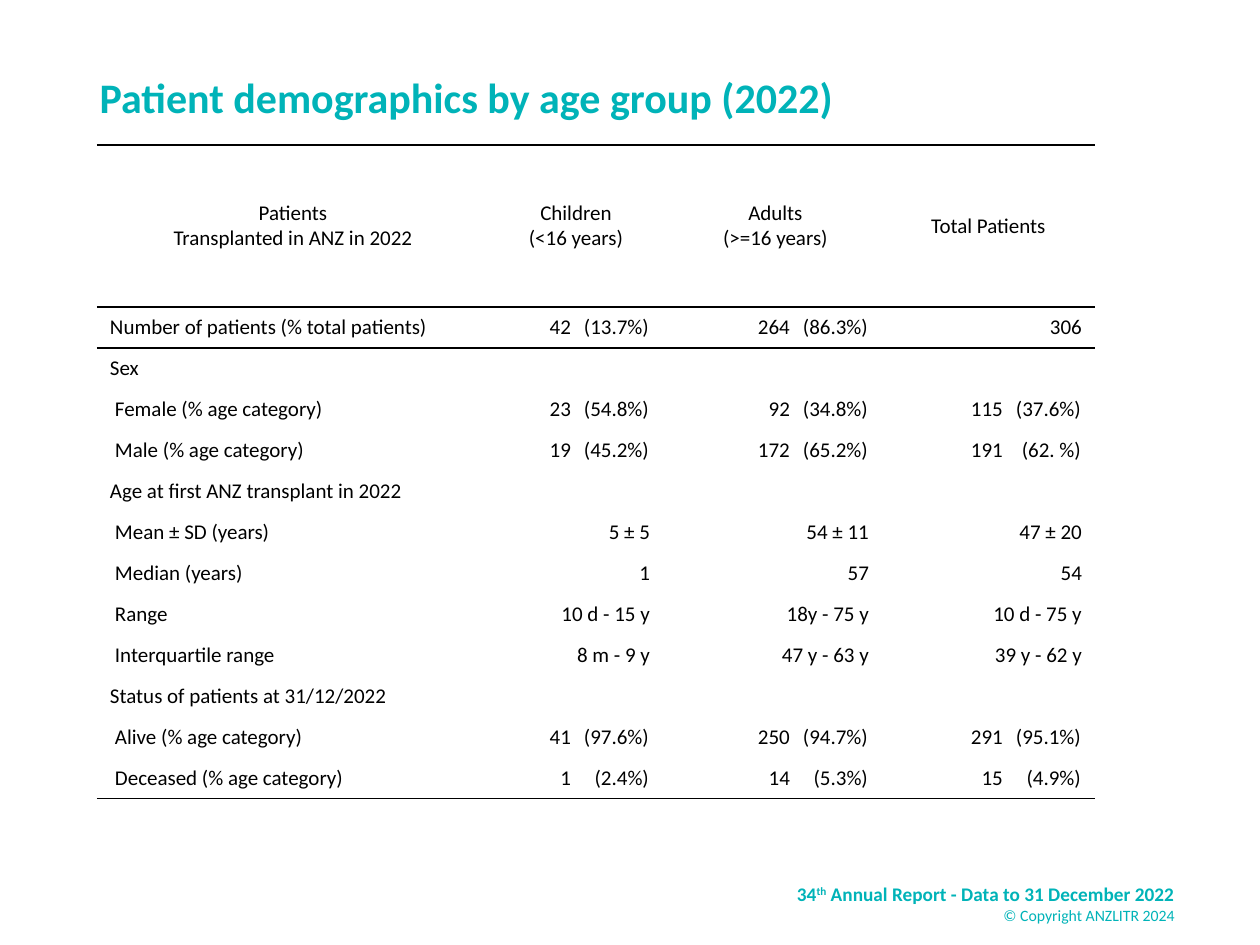
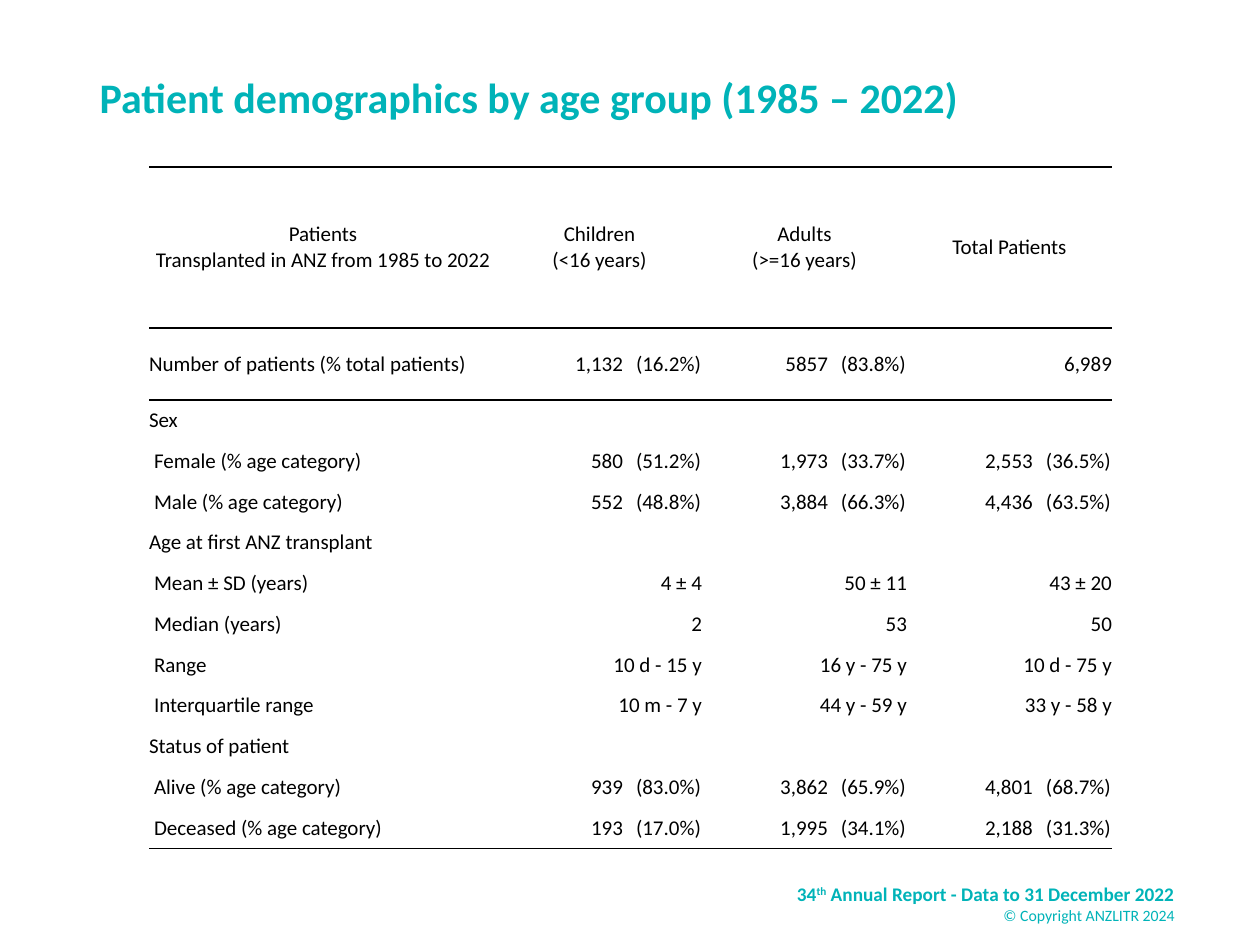
from dataclasses import dataclass

from lxml import etree
from pptx import Presentation
from pptx import util as u
from pptx.dml.color import RGBColor
from pptx.enum import text as t
from pptx.oxml import ns

TEAL = RGBColor(0x00, 0xB3, 0xB8)
BLACK = RGBColor(0x00, 0x00, 0x00)
FONT = "Calibri"
PX_PER_INCH = 126
NO_GRID_STYLE = "{2D5ABB26-0587-4C30-8999-92F81FD0307C}"
COUNT_OFFSET = 79  # from the end of a count to the right edge of its percentage
LABEL_INDENT = 5
COLUMN_HEADS = ("Children\n(<16 years)", "Adults\n(>=16 years)", "Total Patients")


@dataclass(frozen=True)
class Demographics:
    title: str
    left: int
    top: int
    columns: tuple[int, ...]
    header_height: int
    total_height: int
    detail_height: int
    left_inset: int
    right_insets: tuple[int, ...]
    heading: str
    rows: tuple[tuple[str, ...], ...]


YEAR_2022 = Demographics(
    title="Patient demographics by age group (2022)",
    left=97, top=145, columns=(392, 180, 213, 213),
    header_height=162, total_height=41, detail_height=451,
    left_inset=13, right_insets=(13, 19, 13, 13),
    heading="Patients\nTransplanted in ANZ in 2022",
    rows=(
        ("Number of patients (% total patients)", "42 (13.7%)", "264 (86.3%)", "306"),
        ("Sex",),
        ("Female (% age category)", "23 (54.8%)", "92 (34.8%)", "115 (37.6%)"),
        ("Male (% age category)", "19 (45.2%)", "172 (65.2%)", "191 (62. %)"),
        ("Age at first ANZ transplant in 2022",),
        ("Mean ± SD (years)", "5 ± 5", "54 ± 11", "47 ± 20"),
        ("Median (years)", "1", "57", "54"),
        ("Range", "10 d - 15 y", "18y - 75 y", "10 d - 75 y"),
        ("Interquartile range", "8 m - 9 y", "47 y - 63 y", "39 y - 62 y"),
        ("Status of patients at 31/12/2022",),
        ("Alive (% age category)", "41 (97.6%)", "250 (94.7%)", "291 (95.1%)"),
        ("Deceased (% age category)", "1 (2.4%)", "14 (5.3%)", "15 (4.9%)"),
    ),
)

ALL_YEARS = Demographics(
    title="Patient demographics by age group (1985 – 2022)",
    left=149, top=167, columns=(348, 205, 205, 205),
    header_height=161, total_height=72, detail_height=449,
    left_inset=0, right_insets=(0, 0, 0, 0),
    heading="Patients\nTransplanted in ANZ from 1985 to 2022",
    rows=(
        ("Number of patients (% total patients)", "1,132 (16.2%)", "5857 (83.8%)", "6,989"),
        ("Sex",),
        ("Female (% age category)", "580 (51.2%)", "1,973 (33.7%)", "2,553 (36.5%)"),
        ("Male (% age category)", "552 (48.8%)", "3,884 (66.3%)", "4,436 (63.5%)"),
        ("Age at first ANZ transplant",),
        ("Mean ± SD (years)", "4 ± 4", "50 ± 11", "43 ± 20"),
        ("Median (years)", "2", "53", "50"),
        ("Range", "10 d - 15 y", "16 y - 75 y", "10 d - 75 y"),
        ("Interquartile range", "10 m - 7 y", "44 y - 59 y", "33 y - 58 y"),
        ("Status of patient",),
        ("Alive (% age category)", "939 (83.0%)", "3,862 (65.9%)", "4,801 (68.7%)"),
        ("Deceased (% age category)", "193 (17.0%)", "1,995 (34.1%)", "2,188 (31.3%)"),
    ),
)


def px(length: float) -> u.Emu:
    return u.Emu(round(length * u.Inches(1) / PX_PER_INCH))


def format_run(run, size: int, color: RGBColor, bold: bool = False) -> None:
    run.font.name = FONT
    run.font.size = u.Pt(size)
    run.font.bold = bold
    run.font.color.rgb = color


def add_rule(cell, side: str) -> None:
    """Draw a black line on one side of a cell: lnT or lnB."""
    line = etree.SubElement(cell._tc.get_or_add_tcPr(), ns.qn(f"a:{side}"), w=str(u.Pt(1)))
    fill = etree.SubElement(line, ns.qn("a:solidFill"))
    etree.SubElement(fill, ns.qn("a:srgbClr"), val=str(BLACK))


def add_right_tabs(paragraph, *stops: int) -> None:
    tabs = etree.SubElement(paragraph._p.get_or_add_pPr(), ns.qn("a:tabLst"))
    for stop in stops:
        etree.SubElement(tabs, ns.qn("a:tab"), pos=str(px(stop)), algn="r")


def fill_cell(cell, content: str, left_inset: int, right_inset: int) -> None:
    cell.margin_left, cell.margin_right = px(left_inset), px(right_inset)
    cell.margin_top = cell.margin_bottom = 0
    cell.vertical_anchor = t.MSO_ANCHOR.MIDDLE
    cell.fill.background()
    cell.text_frame.text = content
    for paragraph in cell.text_frame.paragraphs:
        for run in paragraph.runs:
            format_run(run, 12, BLACK)


def align_figure(paragraph, text_width: int) -> None:
    """Right-align a figure; a count and its percentage get a tab stop each."""
    if "\t" in paragraph.text:
        paragraph.alignment = t.PP_ALIGN.LEFT
        add_right_tabs(paragraph, text_width - COUNT_OFFSET, text_width - 1)
    else:
        paragraph.alignment = t.PP_ALIGN.RIGHT


def add_demographics_table(slide, data: Demographics) -> None:
    rows = ((data.heading, *COLUMN_HEADS), *data.rows)
    detail_rows = len(rows) - 2
    heights = [data.header_height, data.total_height]
    heights += [data.detail_height / detail_rows] * detail_rows
    table = slide.shapes.add_table(
        len(rows), len(data.columns), px(data.left), px(data.top),
        px(sum(data.columns)), px(sum(heights))).table
    table.first_row = table.horz_banding = False
    table._tbl.tblPr.find(ns.qn("a:tableStyleId")).text = NO_GRID_STYLE
    for column, width in zip(table.columns, data.columns):
        column.width = px(width)

    for r, (row, height) in enumerate(zip(rows, heights)):
        table.rows[r].height = px(height)
        for c, width in enumerate(data.columns):
            cell = table.cell(r, c)
            if r == 0:
                add_rule(cell, "lnT")
            if r in (0, 1, len(rows) - 1):
                add_rule(cell, "lnB")
            content = row[c] if c < len(row) else ""
            if r and c and "(" in content:
                content = "\t" + content.replace(" (", "\t(")
            fill_cell(cell, content, data.left_inset, data.right_insets[c])
            first = cell.text_frame.paragraphs[0]
            if r == 0:
                for paragraph in cell.text_frame.paragraphs:
                    paragraph.alignment = t.PP_ALIGN.CENTER
            elif c:
                align_figure(first, width - data.left_inset - data.right_insets[c])
            elif r > 1 and len(row) > 1:
                first._p.get_or_add_pPr().set("marL", str(px(LABEL_INDENT)))


def add_title(slide, title: str) -> None:
    holder = slide.shapes.title
    holder.left, holder.top, holder.width, holder.height = map(px, (87, 34, 1086, 132))
    frame = holder.text_frame
    frame.text = title
    frame.vertical_anchor = t.MSO_ANCHOR.MIDDLE
    paragraph = frame.paragraphs[0]
    paragraph.alignment = t.PP_ALIGN.LEFT
    paragraph.line_spacing = 0.9
    format_run(paragraph.runs[0], 24, TEAL, bold=True)


def add_master_footer(prs, slide) -> None:
    """Build the report line on a slide, then move it to the shared master."""
    footer = slide.shapes.add_textbox(*map(px, (762, 876, 425, 50)))
    frame = footer.text_frame
    frame.word_wrap = True
    report, copyright_line = frame.paragraphs[0], frame.add_paragraph()
    for part in ("34", "th", " Annual Report - Data to 31 December 2022"):
        run = report.add_run()
        run.text = part
        format_run(run, 11, TEAL, bold=True)
    report.runs[1].font._element.set("baseline", "30000")
    copyright_line.text = "© Copyright ANZLITR 2024"
    format_run(copyright_line.runs[0], 9, TEAL)
    for paragraph in frame.paragraphs:
        paragraph.alignment = t.PP_ALIGN.RIGHT
    prs.slide_master.shapes._spTree.append(footer._element)


def main() -> None:
    prs = Presentation()
    prs.slide_width, prs.slide_height = px(1260), px(945)
    title_only = prs.slide_layouts.get_by_name("Title Only")
    for data in (YEAR_2022, ALL_YEARS):
        slide = prs.slides.add_slide(title_only)
        add_title(slide, data.title)
        add_demographics_table(slide, data)
    add_master_footer(prs, slide)
    prs.save("out.pptx")


if __name__ == "__main__":
    main()
